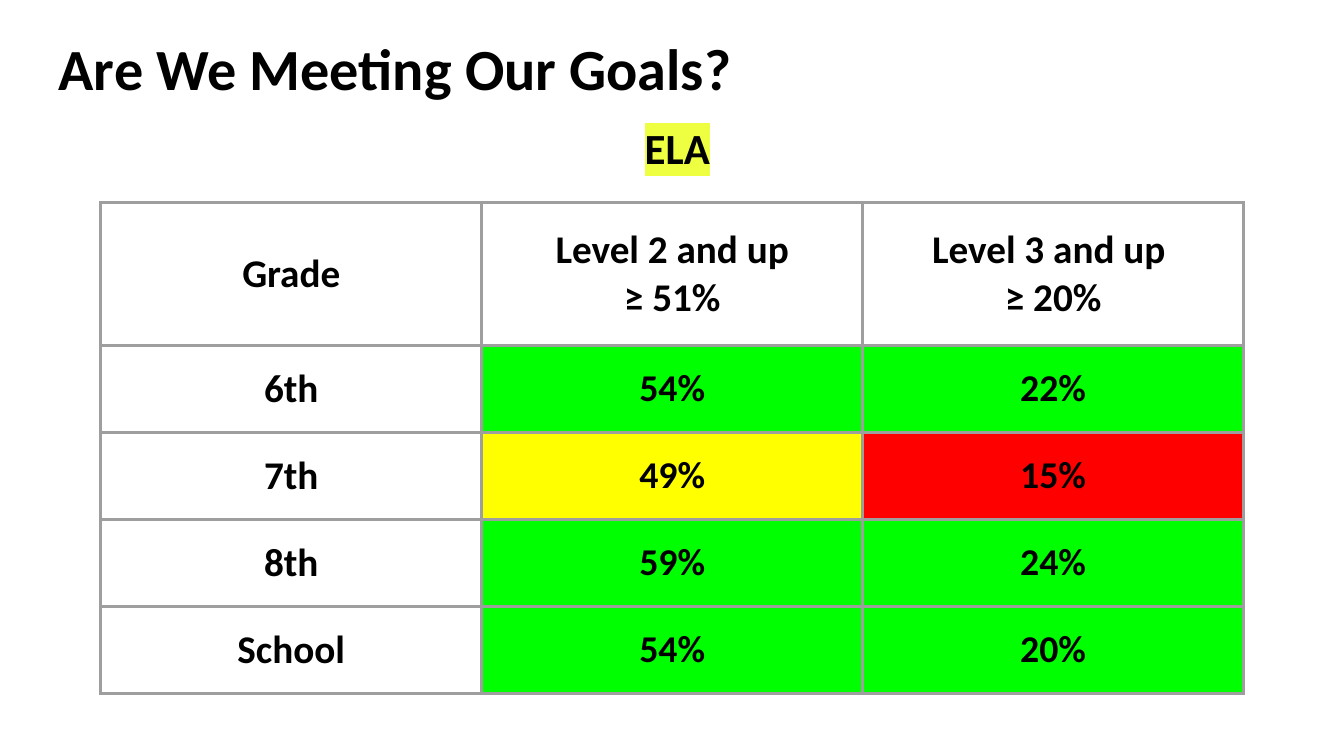
import pptx
import pptx.util
import pptx.dml.color
import pptx.enum.text
import pptx.oxml
import pptx.oxml.ns
from dataclasses import dataclass

Cm = pptx.util.Cm
Pt = pptx.util.Pt
RGB = pptx.dml.color.RGBColor.from_string
Align = pptx.enum.text.PP_ALIGN
Anchor = pptx.enum.text.MSO_ANCHOR
NS = pptx.oxml.ns.nsdecls("a")


@dataclass(frozen=True)
class Theme:
    font: str = "Calibri"
    ink: str = "000000"
    paper: str = "FFFFFF"
    grid: str = "9E9E9E"
    mark: str = "EEFF41"
    met: str = "00FF00"
    near: str = "FFFF00"
    missed: str = "FF0000"
    title: float = 41.6
    subject: float = 30.7
    label: float = 28
    value: float = 27
    rule: float = 2.25
    inset: float = 0.34


THEME = Theme()
HEADS = [["Grade"], ["Level 2 and up", "≥ 51%"], ["Level 3 and up ", "≥ 20%"]]
GRADES = [
    ("6th", ("54%", THEME.met), ("22%", THEME.met)),
    ("7th", ("49%", THEME.near), ("15%", THEME.missed)),
    ("8th", ("59%", THEME.met), ("24%", THEME.met)),
    ("School", ("54%", THEME.met), ("20%", THEME.met)),
]


def pad(item):
    for side in ("left", "right", "top", "bottom"):
        setattr(item, "margin_" + side, Cm(THEME.inset))


def write(frame, lines, size, align):
    for i, line in enumerate(lines):
        para = frame.paragraphs[0] if i == 0 else frame.add_paragraph()
        para.alignment = align
        run = para.add_run()
        run.text = line
        font = run.font
        font.name, font.size, font.bold = THEME.font, Pt(size), True
        font.color.rgb = RGB(THEME.ink)
    return run


def place(shape, box):
    shape.left, shape.top, shape.width, shape.height = map(Cm, box)


def add_title(slide, box):
    title = slide.shapes.title
    place(title, box)
    frame = title.text_frame
    frame.word_wrap = True
    frame.auto_size = pptx.enum.text.MSO_AUTO_SIZE.NONE
    frame.vertical_anchor = Anchor.TOP
    pad(frame)
    write(frame, ["Are We Meeting Our Goals?"], THEME.title, Align.LEFT)


def add_subject(slide, box):
    frame = slide.shapes.add_textbox(*map(Cm, box)).text_frame
    frame.word_wrap = True
    pad(frame)
    run = write(frame, ["ELA"], THEME.subject, Align.CENTER)
    mark = pptx.oxml.parse_xml(
        f'<a:highlight {NS}><a:srgbClr val="{THEME.mark}"/></a:highlight>')
    fill = run.font._element.find(pptx.oxml.ns.qn("a:solidFill"))
    fill.addnext(mark)


def set_cell(cell, lines, size, fill):
    pad(cell)
    cell.vertical_anchor = Anchor.MIDDLE
    write(cell.text_frame, lines, size, Align.CENTER)
    props = cell._tc.get_or_add_tcPr()
    for side in ("lnL", "lnR", "lnT", "lnB"):
        props.append(pptx.oxml.parse_xml(
            f'<a:{side} {NS} w="{Pt(THEME.rule)}"><a:solidFill>'
            f'<a:srgbClr val="{THEME.grid}"/></a:solidFill></a:{side}>'))
    cell.fill.solid()
    cell.fill.fore_color.rgb = RGB(fill)


def add_goals(slide, box, head):
    count = len(GRADES)
    table = slide.shapes.add_table(
        count + 1, len(HEADS), *map(Cm, box)).table
    table.first_row = table.horz_banding = False
    for col in table.columns:
        col.width = Cm(box[2] / len(HEADS))
    for i, row in enumerate(table.rows):
        row.height = Cm((box[3] - head) / count if i else head)
    for c, lines in enumerate(HEADS):
        set_cell(table.cell(0, c), lines, THEME.label, THEME.paper)
    for r, (grade, *scores) in enumerate(GRADES, 1):
        set_cell(table.cell(r, 0), [grade], THEME.label, THEME.paper)
        for c, (score, fill) in enumerate(scores, 1):
            set_cell(table.cell(r, c), [score], THEME.value, fill)


def main():
    deck = pptx.Presentation()
    deck.slide_width, deck.slide_height = Cm(33.87), Cm(19.05)
    slide = deck.slides.add_slide(deck.slide_layouts[5])
    add_title(slide, (1.14, 0.48, 31.55, 2.13))
    add_goals(slide, (2.54, 5.1, 28.8, 12.37), 3.6)
    add_subject(slide, (10.97, 2.72, 12.2, 2))
    deck.save("out.pptx")


if __name__ == "__main__":
    main()
